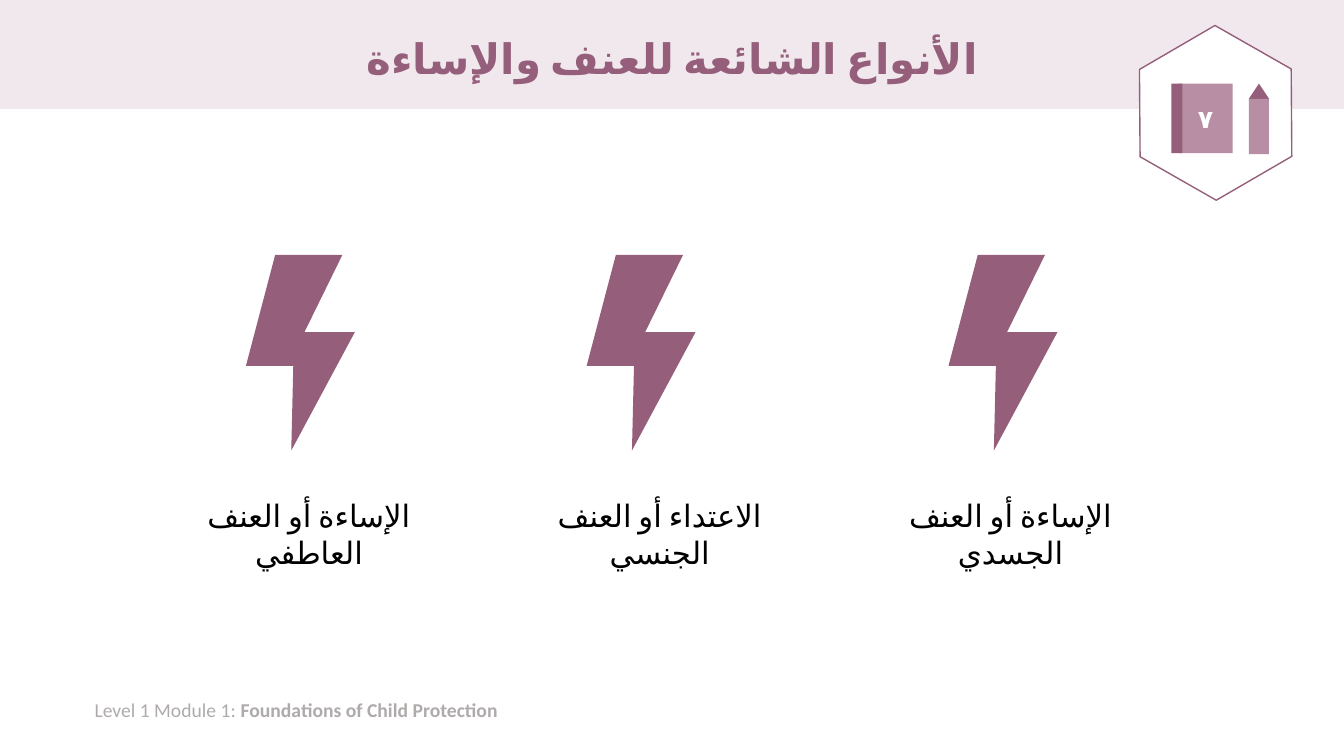
from pptx import Presentation, util as u
from pptx.dml.color import RGBColor
from pptx.enum import shapes, text
from pptx.oxml.ns import qn
from lxml import etree

COLORS = {
    "band": "F1E8ED",
    "plum": "955F7B",
    "mauve": "B78EA3",
    "white": "FFFFFF",
    "black": "000000",
    "grey": "AFABAB",
}
COLUMNS, ROWS = 40, 22.5
BOLT = [(0.87, 0), (2.87, 0), (1.74, 2.3), (3.24, 2.3), (1.35, 5.82), (1.41, 3.3), (0, 3.3)]
BOLT_TOP, LABEL_TOP, LABEL_HEIGHT = 7.59, 14.64, 2.52
ABUSE_TYPES = [
    ("الإساءة أو العنف العاطفي", 7.32, 5.16, 8.07),
    ("الاعتداء أو العنف الجنسي", 17.46, 15.93, 7.41),
    ("الإساءة أو العنف الجسدي", 28.23, 26.04, 8.07),
]


class SlideBuilder:
    def __init__(self, presentation):
        presentation.slide_width = u.Inches(13.333)
        presentation.slide_height = u.Inches(7.5)
        self.column = presentation.slide_width / COLUMNS
        self.row = presentation.slide_height / ROWS
        self.slide = presentation.slides.add_slide(presentation.slide_layouts[5])

    def color(self, name):
        return RGBColor.from_string(COLORS[name])

    def box(self, left, top, width, height):
        return (round(left * self.column), round(top * self.row),
                round(width * self.column), round(height * self.row))

    def paint(self, shape, fill, line=None):
        shape.shadow.inherit = False
        shape.fill.solid()
        shape.fill.fore_color.rgb = self.color(fill)
        if line:
            shape.line.color.rgb = self.color(line)
            shape.line.width = u.Pt(1)
        else:
            shape.line.fill.background()
        return shape

    def shape(self, kind, box, fill, line=None):
        return self.paint(self.slide.shapes.add_shape(kind, *self.box(*box)), fill, line)

    def bolt(self, left, top):
        points = [((left + x) * self.column, (top + y) * self.row) for x, y in BOLT]
        builder = self.slide.shapes.build_freeform(*points[0])
        builder.add_line_segments(points[1:], close=True)
        return self.paint(builder.convert_to_shape(), "plum")

    def style(self, paragraph, size, color, bold=False, font="Calibri"):
        for run in paragraph.runs:
            run.font.name = font
            run.font.size = u.Pt(size)
            run.font.bold = bold
            run.font.color.rgb = self.color(color)

    def arabic(self, shape, content, size, color, bold=False, font="Calibri"):
        shape.text_frame.text = content
        paragraph = shape.text_frame.paragraphs[0]
        paragraph.alignment = text.PP_ALIGN.CENTER
        self.style(paragraph, size, color, bold, font)
        for properties in shape.element.iter(qn("a:pPr")):
            properties.set("rtl", "1")
        for properties in shape.element.iter(qn("a:rPr")):
            properties.set("lang", "ar-SA")
            etree.SubElement(properties, qn("a:cs")).set("typeface", font)
        return paragraph

    def title(self, content, box):
        title = self.slide.shapes.title
        title.left, title.top, title.width, title.height = self.box(*box)
        title.text_frame.auto_size = text.MSO_AUTO_SIZE.NONE
        title.text_frame.vertical_anchor = text.MSO_ANCHOR.MIDDLE
        self.arabic(title, content, 30, "plum", bold=True).line_spacing = 0.9
        return title

    def text_box(self, box):
        shape = self.slide.shapes.add_textbox(*self.box(*box))
        shape.text_frame.word_wrap = True
        shape.text_frame.auto_size = text.MSO_AUTO_SIZE.SHAPE_TO_FIT_TEXT
        return shape

    def footer(self, module, name, box):
        paragraph = self.text_box(box).text_frame.paragraphs[0]
        for content in (module, name):
            paragraph.add_run().text = content
        self.style(paragraph, 14, "grey")
        paragraph.runs[1].font.bold = True

    def badge(self, number):
        kinds = shapes.MSO_SHAPE
        hexagon = self.shape(kinds.HEXAGON, (33.57, 1.11, 5.22, 4.5), "white", "plum")
        hexagon.adjustments[0] = 0.29
        hexagon.rotation = 29.7
        book = self.shape(kinds.RECTANGLE, (35.07, 2.49, 1.62, 2.07), "mauve")
        book.text_frame.vertical_anchor = text.MSO_ANCHOR.MIDDLE
        self.arabic(book, number, 18, "white", bold=True, font="Arial")
        self.shape(kinds.RECTANGLE, (34.86, 2.49, 0.33, 2.07), "plum")
        self.shape(kinds.ISOSCELES_TRIANGLE, (37.17, 2.49, 0.6, 0.45), "plum")
        self.shape(kinds.RECTANGLE, (37.17, 2.94, 0.6, 1.65), "mauve")


def main():
    presentation = Presentation()
    builder = SlideBuilder(presentation)
    band = builder.shape(shapes.MSO_SHAPE.RECTANGLE, (0, 0, COLUMNS, 3.24), "band")
    title = builder.title("الأنواع الشائعة للعنف والإساءة", (2.76, 0.39, 34.5, 2.85))
    title.element.addprevious(band.element)
    builder.footer("Level 1 Module 1: ", "Foundations of Child Protection",
                   (2.52, 20.61, 34.05, 1.02))
    for label, bolt_left, label_left, label_width in ABUSE_TYPES:
        label_box = builder.text_box((label_left, LABEL_TOP, label_width, LABEL_HEIGHT))
        builder.arabic(label_box, label, 22, "black")
        builder.bolt(bolt_left, BOLT_TOP)
    builder.badge("٧")
    presentation.save("out.pptx")


if __name__ == "__main__":
    main()
